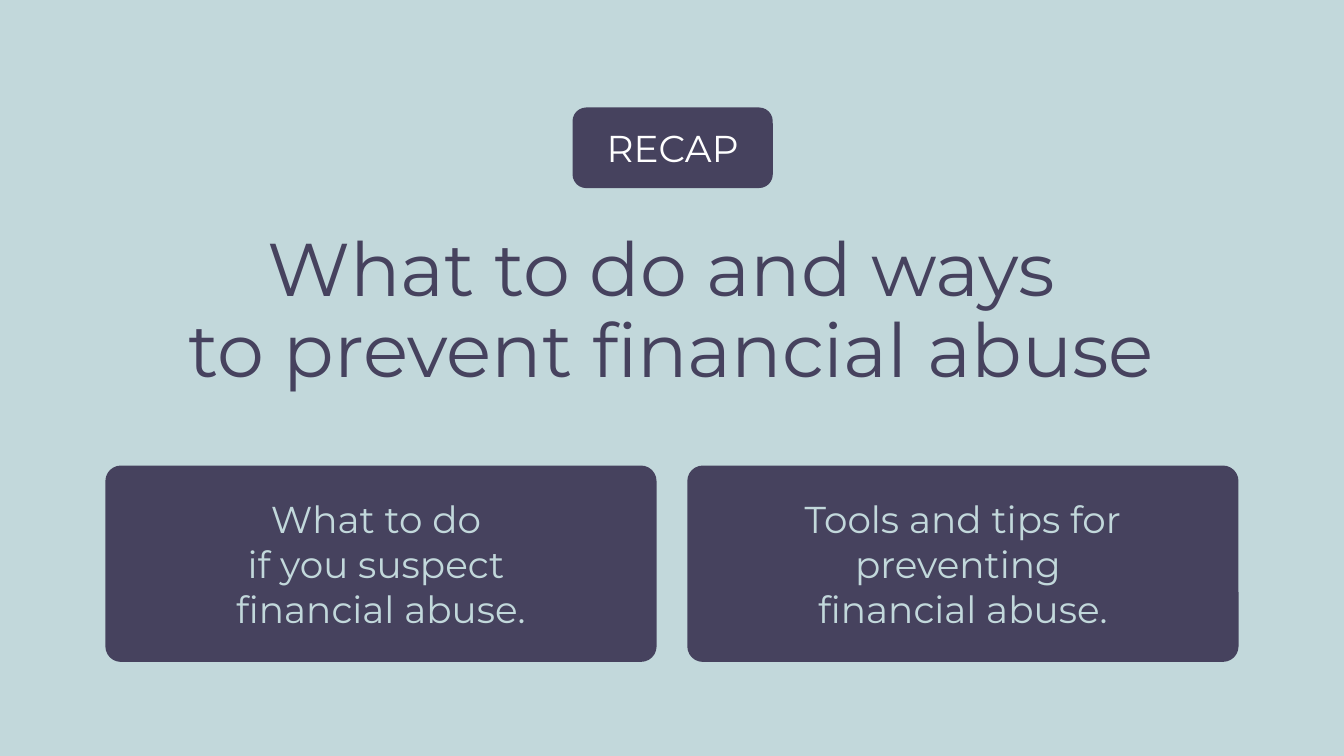
from pptx import Presentation
from pptx.dml.color import RGBColor
from pptx.enum.shapes import MSO_SHAPE
from pptx.enum.text import MSO_ANCHOR, PP_ALIGN
from pptx.util import Inches, Pt

COLORS = {"background": "C2D8DB", "plum": "46425E", "white": "FFFFFF"}
FONT = "Montserrat"
MARGIN = 0.1

CARD_TEXTS = [
    "What to do \vif you suspect \vfinancial abuse.",
    "Tools and tips for preventing \vfinancial abuse.",
]
CARD_LEFT, CARD_TOP, CARD_WIDTH, CARD_HEIGHT = 0.8, 3.48, 4.07, 1.43
CARD_GAP = 0.26


def color(name):
    return RGBColor.from_string(COLORS[name])


def write_text(shape, text, size, color_name, anchor=MSO_ANCHOR.TOP):
    """Fill a shape with one centred paragraph; \\v marks a line break."""
    frame = shape.text_frame
    frame.word_wrap = True
    frame.vertical_anchor = anchor
    frame.margin_left = frame.margin_right = Inches(MARGIN)
    frame.margin_top = frame.margin_bottom = Inches(MARGIN)
    paragraph = frame.paragraphs[0]
    paragraph.text = text
    paragraph.alignment = PP_ALIGN.CENTER
    paragraph.font.name = FONT
    paragraph.font.size = Pt(size)
    paragraph.font.color.rgb = color(color_name)
    return paragraph


def add_title(slide, text):
    box = slide.shapes.add_textbox(
        Inches(0.48), Inches(1.63), Inches(9.03), Inches(1.34))
    write_text(box, text, 40, "plum").line_spacing = 0.9


def add_rounded_box(slide, left, top, width, height, rounding):
    shape = slide.shapes.add_shape(
        MSO_SHAPE.ROUNDED_RECTANGLE,
        Inches(left), Inches(top), Inches(width), Inches(height))
    shape.adjustments[0] = rounding
    shape.shadow.inherit = False
    shape.fill.solid()
    shape.fill.fore_color.rgb = color("plum")
    shape.line.fill.background()
    return shape


def add_badge(slide, text):
    badge = add_rounded_box(slide, 4.26, 0.8, 1.49, 0.6, 0.17)
    write_text(badge, text, 20, "white").space_after = Pt(11)


def add_card(slide, left, text):
    card = add_rounded_box(slide, left, CARD_TOP, CARD_WIDTH, CARD_HEIGHT, 0.07)
    card.line.color.rgb = color("plum")
    card.line.width = Pt(2.25)
    write_text(card, text, 20, "background", MSO_ANCHOR.MIDDLE)


def main():
    # Widescreen 16:9 slide
    presentation = Presentation()
    presentation.slide_width = Inches(10)
    presentation.slide_height = presentation.slide_width * 9 // 16
    slide = presentation.slides.add_slide(presentation.slide_layouts[6])

    # Background
    slide.background.fill.solid()
    slide.background.fill.fore_color.rgb = color("background")

    # Heading
    add_title(slide, "What to do and ways \vto prevent financial abuse")
    add_badge(slide, "RECAP")

    # Topic cards
    for index, text in enumerate(CARD_TEXTS):
        add_card(slide, CARD_LEFT + index * (CARD_WIDTH + CARD_GAP), text)

    presentation.save("out.pptx")


if __name__ == "__main__":
    main()
